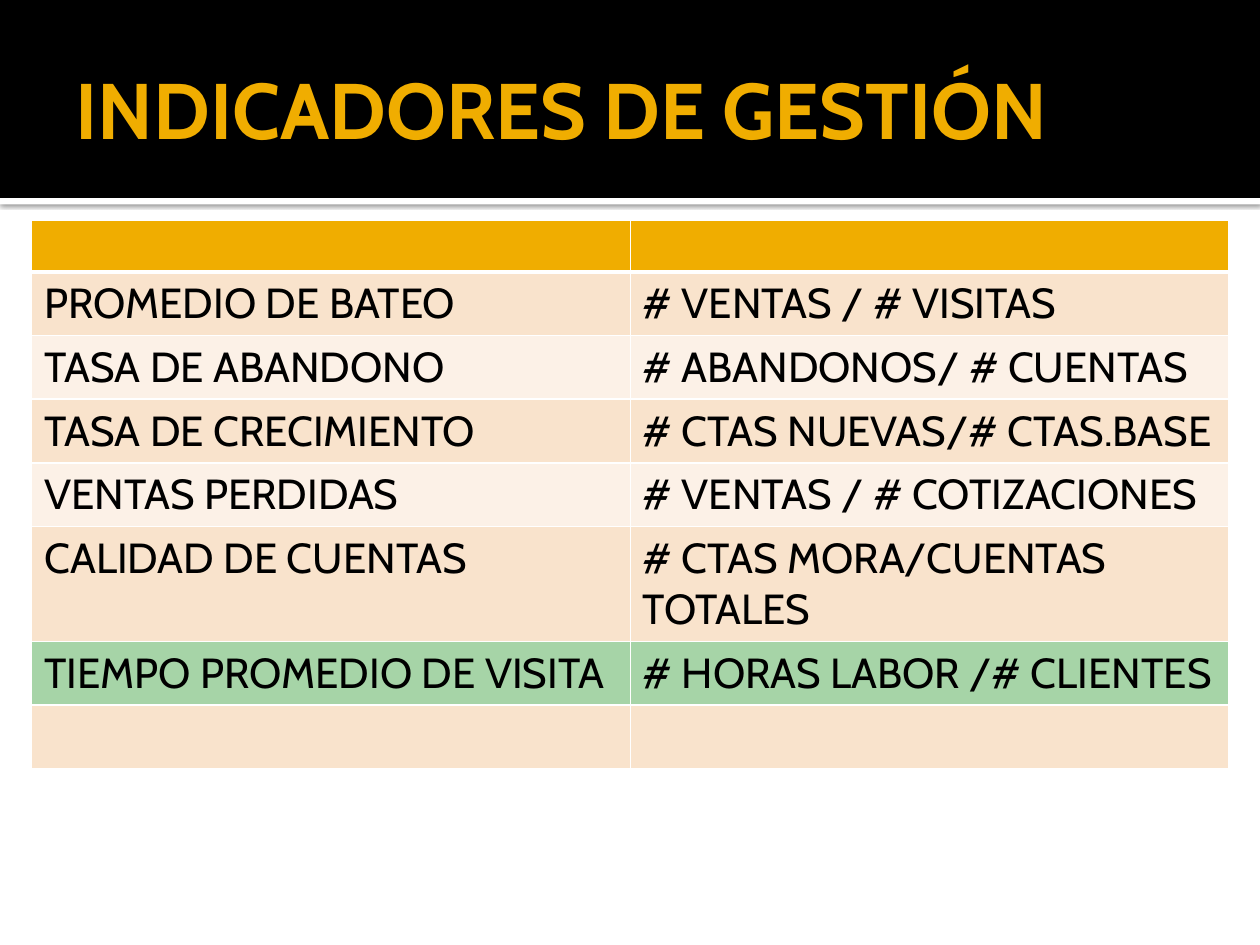
from dataclasses import dataclass

from lxml import etree
from pptx import Presentation
from pptx import util as u
from pptx.dml.color import RGBColor
from pptx.enum import shapes, text
from pptx.oxml import ns


@dataclass(frozen=True)
class Theme:
    """Colours, font and type sizes of the slide."""
    font: str = "Cabin"
    title_size: int = 45
    cell_size: int = 24
    header_size: int = 18
    accent: str = "F0AD00"
    ink: str = "000000"
    paper: str = "FFFFFF"
    dark_band: str = "F9E3CC"
    light_band: str = "FCF1E7"
    highlight: str = "A6D4A7"


THEME = Theme()
INDICATORS = [
    ("PROMEDIO DE BATEO", "# VENTAS / # VISITAS"),
    ("TASA DE ABANDONO", "# ABANDONOS/ # CUENTAS"),
    ("TASA DE CRECIMIENTO", "# CTAS NUEVAS/# CTAS.BASE"),
    ("VENTAS PERDIDAS", "# VENTAS / # COTIZACIONES"),
    ("CALIDAD DE CUENTAS", "# CTAS MORA/CUENTAS TOTALES"),
    ("TIEMPO PROMEDIO DE VISITA", "# HORAS LABOR /# CLIENTES"),
    ("", ""),
]
HIGHLIGHTED_ROW = 6


def add_xml(parent, tag, **attributes):
    """Append a drawing element with the given attributes."""
    values = {name: str(value) for name, value in attributes.items()}
    return etree.SubElement(parent, ns.qn(tag), values)


def write(frame, words, size, color=THEME.ink, bold=False):
    """Write left-aligned words, or set the type size of an empty paragraph."""
    paragraph = frame.paragraphs[0]
    paragraph.alignment = text.PP_ALIGN.LEFT
    if not words:
        add_xml(paragraph._p, "a:endParaRPr", sz=size * 100)
        return
    run = paragraph.add_run()
    run.text = words
    run.font.name = THEME.font
    run.font.size = u.Pt(size)
    run.font.bold = bold
    run.font.color.rgb = RGBColor.from_string(color)


def add_band(slide, top, height, color):
    """Add a full-width band without outline."""
    band = slide.shapes.add_shape(
        shapes.MSO_SHAPE.RECTANGLE, 0, u.Cm(top), u.Cm(25.4), u.Cm(height))
    band.fill.solid()
    band.fill.fore_color.rgb = RGBColor.from_string(color)
    band.line.fill.background()
    band.shadow.inherit = False
    return band


def cast_shadow(band):
    """Give a band a soft shadow that falls downwards."""
    effects = band.element.spPr.find(ns.qn("a:effectLst"))
    shadow = add_xml(effects, "a:outerShdw", blurRad=u.Pt(2.5), dist=u.Pt(0.8),
                     dir=90 * 60000, algn="tl", rotWithShape=0)
    add_xml(add_xml(shadow, "a:srgbClr", val=THEME.ink), "a:alpha", val=60000)


def place_title(slide, words):
    """Format the title placeholder and bring it in front of the bands."""
    title = slide.shapes.title
    title.left, title.top = u.Cm(1.27), u.Cm(0.43)
    title.width, title.height = u.Cm(22.86), u.Cm(3.48)
    frame = title.text_frame
    frame.word_wrap = True
    frame.auto_size = text.MSO_AUTO_SIZE.NONE
    frame.vertical_anchor = text.MSO_ANCHOR.MIDDLE
    frame.margin_left, frame.margin_right = u.Cm(0.25), u.Cm(0.13)
    write(frame, words, THEME.title_size, color=THEME.accent, bold=True)
    slide.shapes.element.append(title.element)


def style_cell(cell, color, bottom=1):
    """Fill a cell and draw its white borders."""
    properties = cell._tc.get_or_add_tcPr()
    for side, width in (("L", 1), ("R", 1), ("T", 1), ("B", bottom)):
        border = add_xml(properties, f"a:ln{side}", w=u.Pt(width))
        add_xml(add_xml(border, "a:solidFill"), "a:srgbClr", val=THEME.paper)
    cell.fill.solid()
    cell.fill.fore_color.rgb = RGBColor.from_string(color)


def row_color(number):
    """Return the fill of a table row."""
    if number == 0:
        return THEME.accent
    if number == HIGHLIGHTED_ROW:
        return THEME.highlight
    return THEME.dark_band if number % 2 else THEME.light_band


def add_indicator_table(slide):
    """Add the indicators and their formulas under an empty header."""
    rows = [("", "")] + INDICATORS
    holder = slide.shapes.add_table(
        len(rows), 2, u.Cm(0.64), u.Cm(4.45), u.Cm(24.13), u.Cm(10.95))
    table = holder.table
    for number, entries in enumerate(rows):
        table.rows[number].height = u.Cm(1.03)
        header = number == 0
        size = THEME.header_size if header else THEME.cell_size
        for column, words in enumerate(entries):
            cell = table.cell(number, column)
            style_cell(cell, row_color(number), bottom=3 if header else 1)
            write(cell.text_frame, words, size)
    holder.height = u.Cm(10.95)


def main():
    """Build and save the slide."""
    deck = Presentation()
    deck.slide_width, deck.slide_height = u.Cm(25.4), u.Cm(19.05)
    slide = deck.slides.add_slide(deck.slide_layouts[5])
    cast_shadow(add_band(slide, 3.99, 0.13, THEME.paper))
    add_band(slide, 0, 3.99, THEME.ink)
    place_title(slide, "INDICADORES DE GESTIÓN")
    add_indicator_table(slide)
    deck.save("out.pptx")


if __name__ == "__main__":
    main()
